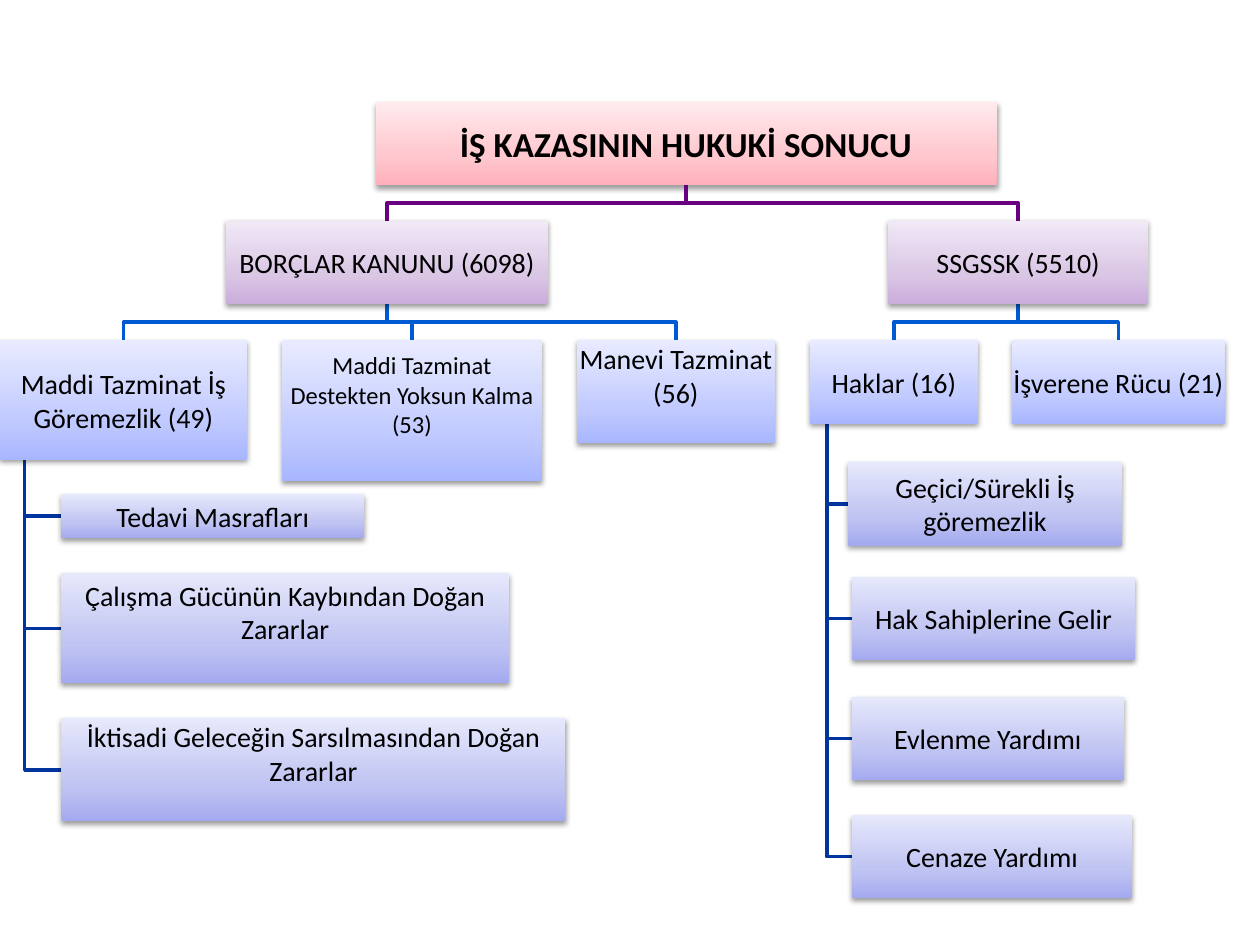
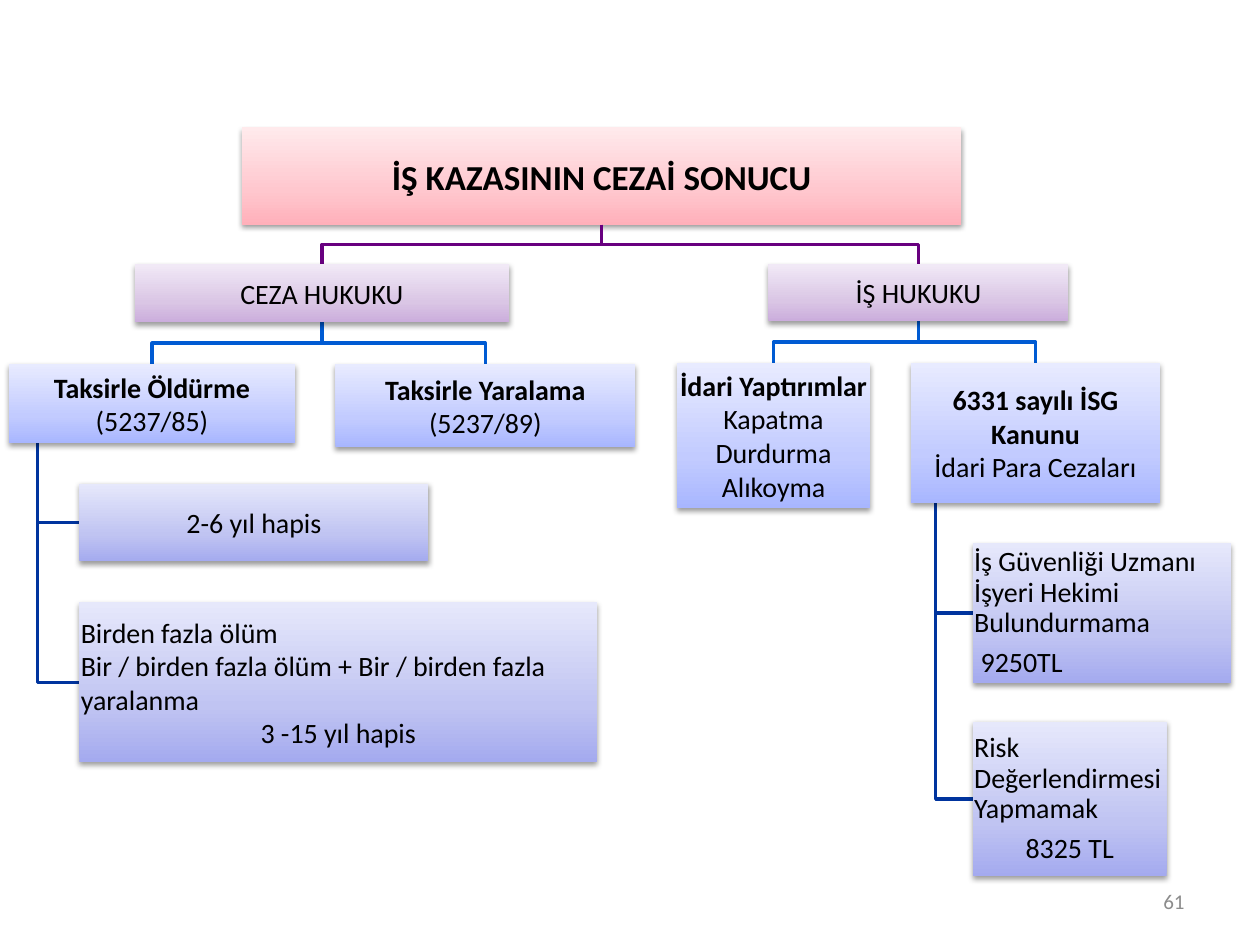
"""Build two hierarchy slides on the legal results of work accidents."""
import copy
from dataclasses import dataclass, field

import lxml.etree
import pptx
import pptx.dml.color
import pptx.enum.text
import pptx.oxml.ns
import pptx.util

Cm = pptx.util.Cm
Pt = pptx.util.Pt
qn = pptx.oxml.ns.qn
ALIGN = pptx.enum.text.PP_ALIGN
ANCHOR = pptx.enum.text.MSO_ANCHOR

COLORS = {
    "text": "000000",
    "number": "8C8C8C",
    "shadow": "000000",
    "fills": [
        ["FFB0BA", "FFC7CE", "FFEAEC"],
        ["CBADDC", "DAC6E5", "F1E9F6"],
        ["A8B6FF", "C2CBFF", "E8EBFF"],
        ["A4AAEF", "C0C4F2", "E6E8FB"],
    ],
    "links": ["68007F", "005BD3", "00349E"],
}
STOPS = [0, 0.35, 1]
INSET = 0.03
BLANK_LINE = 0.69
ROW = 1.68
BOLD = {"bold": True}
LEFT = {"align": ALIGN.LEFT}
SPACED = {"spacing": 0.9, "after": 5.6}


def rgb(value):
    return pptx.dml.color.RGBColor.from_string(value)


def write(p, text, size=16, bold=False, color="text", align=ALIGN.CENTER,
          spacing=None, after=None, indent=0):
    if indent:
        p._p.get_or_add_pPr().set("marL", str(Cm(indent)))
    p.alignment = align
    if spacing:
        p.line_spacing = spacing
    if after:
        p.space_after = Pt(after)
    r = p.add_run()
    r.text = text
    r.font.name = "Calibri"
    r.font.size = Pt(size)
    r.font.bold = bold
    r.font.color.rgb = rgb(COLORS[color])


@dataclass
class Node:
    """A box in cm, its paragraphs with their format, and its child boxes."""
    x: float
    y: float
    w: float
    h: float
    lines: list
    children: list = field(default_factory=list)
    pad: float = INSET

    def walk(self, depth=0):
        yield self, depth
        for child in self.children:
            yield from child.walk(depth + 1)


class Deck:
    """Holds the style and the current slide."""

    def __init__(self):
        self.prs = pptx.Presentation()
        self.prs.slide_width = Cm(25.4)
        self.prs.slide_height = Cm(19.05)
        self.s = None

    def slide(self):
        self.s = self.prs.slides.add_slide(self.prs.slide_layouts[5])

    def tree(self, root):
        nodes = list(root.walk())
        for node, depth in nodes:
            for child in node.children:
                self.link(node, child, depth)
        for node, depth in nodes:
            self.box(node, depth)

    def link(self, parent, child, depth):
        bottom = parent.y + parent.h
        if depth == 2:
            x = parent.x + parent.w / 10
            y = child.y + child.h / 2
            points = [(x, bottom), (x, y), (child.x, y)]
        else:
            x1 = parent.x + parent.w / 2
            x2 = child.x + child.w / 2
            middle = (bottom + child.y) / 2
            points = [(x1, bottom), (x1, middle), (x2, middle), (x2, child.y)]
        points = [(Cm(x), Cm(y)) for x, y in points]
        builder = self.s.shapes.build_freeform(*points[0])
        builder.add_line_segments(points[1:], close=False)
        sp = builder.convert_to_shape()
        sp.shadow.inherit = False
        sp.fill.background()
        sp.line.color.rgb = rgb(COLORS["links"][depth])
        sp.line.width = Pt(2)

    def box(self, node, depth):
        place = [Cm(v) for v in (node.x, node.y, node.w, node.h)]
        if depth == 0:
            sp = self.s.shapes.title
            sp.left, sp.top, sp.width, sp.height = place
        else:
            sp = self.s.shapes.add_shape(1, *place)
        self.gradient(sp, COLORS["fills"][depth])
        sp.line.fill.background()
        self.shadow(sp)
        tf = sp.text_frame
        tf.auto_size = pptx.enum.text.MSO_AUTO_SIZE.NONE
        tf.margin_left = tf.margin_right = tf.margin_top = Cm(INSET)
        tf.margin_bottom = Cm(node.pad)
        self.fill_text(tf, node.lines)

    def gradient(self, sp, colors):
        sp.fill.gradient()
        sp.fill.gradient_angle = 90
        stops = sp._element.spPr.find(qn("a:gradFill")).find(qn("a:gsLst"))
        stops.append(copy.deepcopy(stops[0]))
        for stop, position, color in zip(sp.fill.gradient_stops, STOPS, colors):
            stop.position = position
            stop.color.rgb = rgb(color)

    def shadow(self, sp):
        sp.shadow.inherit = False
        effects = sp._element.spPr.find(qn("a:effectLst"))
        outer = lxml.etree.SubElement(
            effects, qn("a:outerShdw"), blurRad="40000", dist="20000",
            dir="5400000", rotWithShape="0")
        color = lxml.etree.SubElement(outer, qn("a:srgbClr"), val=COLORS["shadow"])
        lxml.etree.SubElement(color, qn("a:alpha"), val="38000")

    def fill_text(self, tf, lines):
        tf.word_wrap = True
        tf.vertical_anchor = ANCHOR.MIDDLE
        for i, line in enumerate(lines):
            text, fmt = (line, {}) if isinstance(line, str) else line
            p = tf.add_paragraph() if i else tf.paragraphs[0]
            write(p, text, **fmt)

    def number(self, text):
        sp = self.s.shapes.add_textbox(Cm(18.21), Cm(17.65), Cm(5.92), Cm(1.02))
        fmt = {"size": 12, "color": "number", "align": ALIGN.RIGHT}
        self.fill_text(sp.text_frame, [(text, fmt)])


def legal_results():
    losses = [
        Node(1.24, 9.96, 6.1, 0.89, ["Tedavi Masrafları"]),
        Node(1.24, 11.56, 9.02, 2.21,
             ["Çalışma Gücünün Kaybından Doğan Zararlar"], pad=BLANK_LINE),
        Node(1.24, 14.48, 10.16, 2.08,
             ["İktisadi Geleceğin Sarsılmasından Doğan Zararlar"], pad=BLANK_LINE),
    ]
    rights = [
        Node(17.09, 9.32, 5.54, ROW, ["Geçici/Sürekli İş göremezlik"]),
        Node(17.17, 11.63, 5.72, ROW, ["Hak Sahiplerine Gelir"]),
        Node(17.17, 14.05, 5.49, ROW, ["Evlenme Yardımı"]),
        Node(17.17, 16.43, 5.66, ROW, ["Cenaze Yardımı"]),
    ]
    obligations = [
        Node(0, 6.86, 4.98, 2.41, ["Maddi Tazminat İş Göremezlik (49)"], losses),
        Node(5.69, 6.86, 5.23, 2.84,
             [("Maddi Tazminat", {"size": 14}),
              ("Destekten Yoksun Kalma (53)", {"size": 14})], pad=BLANK_LINE),
        Node(11.63, 6.86, 3.99, 2.08, ["Manevi Tazminat (56)"], pad=BLANK_LINE),
    ]
    insurance = [
        Node(16.33, 6.86, 3.38, ROW, ["Haklar (16)"], rights),
        Node(20.4, 6.86, 4.29, ROW, ["İşverene Rücu (21)"]),
    ]
    return Node(7.57, 2.06, 12.52, ROW,
                [("İŞ KAZASININ HUKUKİ SONUCU", {"size": 20, "bold": True})], [
                    Node(4.55, 4.45, 6.5, ROW, ["BORÇLAR KANUNU (6098)"], obligations),
                    Node(17.91, 4.45, 5.23, ROW, ["SSGSSK (5510)"], insurance),
                ])


def penal_results():
    prison = [
        Node(1.6, 9.75, 7.04, 1.57, ["2-6 yıl hapis"]),
        Node(1.6, 12.14, 10.44, 3.23,
             [("Birden fazla ölüm", LEFT),
              ("Bir / birden fazla ölüm + Bir / birden fazla yaralanma", LEFT),
              "3 -15 yıl hapis"]),
    ]
    fines = [
        Node(19.61, 10.95, 5.21, 2.82,
             [("İş Güvenliği Uzmanı İşyeri Hekimi Bulundurmama", LEFT | SPACED),
              ("9250TL", LEFT | SPACED | {"indent": 0.13})]),
        Node(19.61, 14.55, 3.91, 3.12,
             [("Risk Değerlendirmesi Yapmamak", LEFT | SPACED),
              ("8325 TL", SPACED)]),
    ]
    criminal = [
        Node(0.18, 7.34, 5.77, 1.6, [("Taksirle Öldürme", BOLD), "(5237/85)"], prison),
        Node(6.76, 7.34, 6.05, ROW, [("Taksirle Yaralama", BOLD), "(5237/89)"]),
    ]
    labour = [
        Node(13.64, 7.32, 3.91, 2.92,
             [("İdari Yaptırımlar", BOLD), "Kapatma", "Durdurma", "Alıkoyma"]),
        Node(18.36, 7.32, 5.03, 2.82,
             [("6331 sayılı İSG Kanunu", BOLD), "İdari Para Cezaları"], fines),
    ]
    return Node(4.88, 2.57, 14.5, 1.96,
                [("İŞ KAZASININ CEZAİ SONUCU", {"size": 20, "bold": True})], [
                    Node(2.72, 5.33, 7.54, 1.17, ["CEZA HUKUKU"], criminal),
                    Node(15.49, 5.33, 6.05, 1.14, ["İŞ HUKUKU"], labour),
                ])


def main():
    deck = Deck()
    deck.slide()
    deck.tree(legal_results())
    deck.slide()
    deck.tree(penal_results())
    deck.number("61")
    deck.prs.save("out.pptx")


if __name__ == "__main__":
    main()
